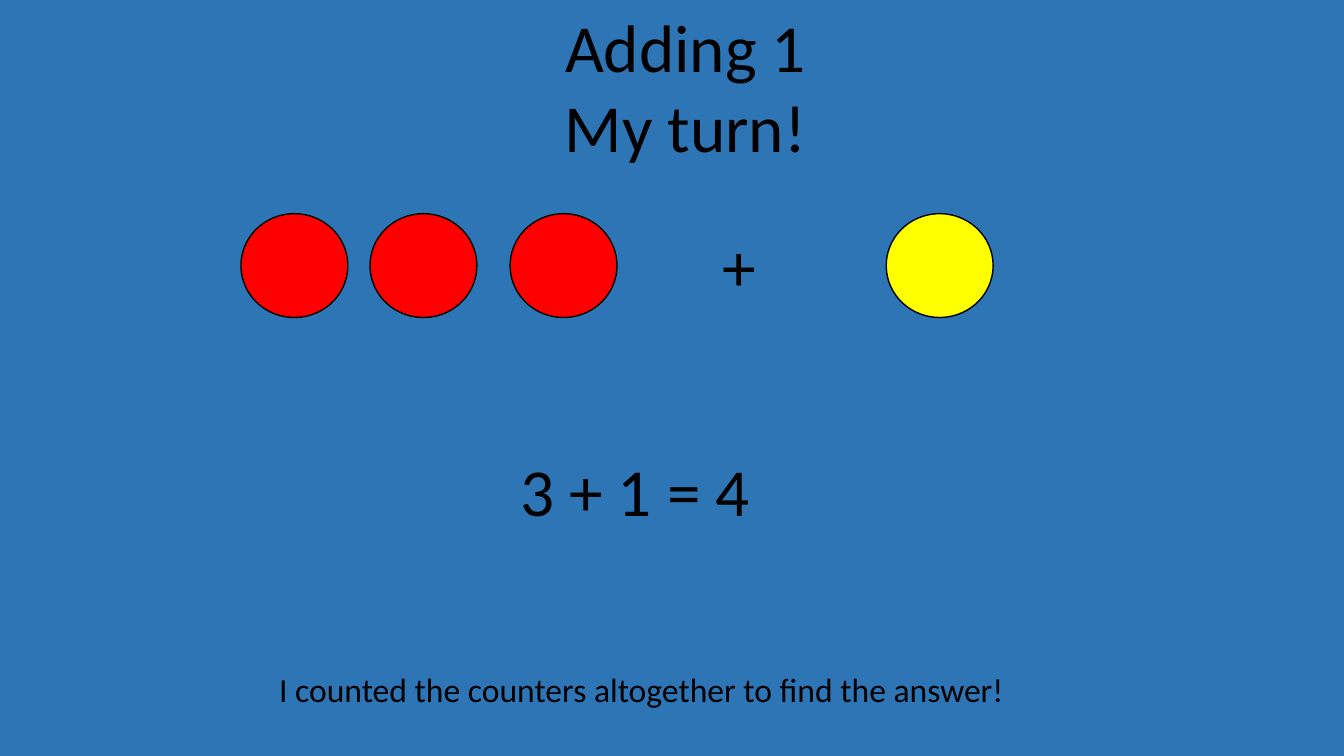
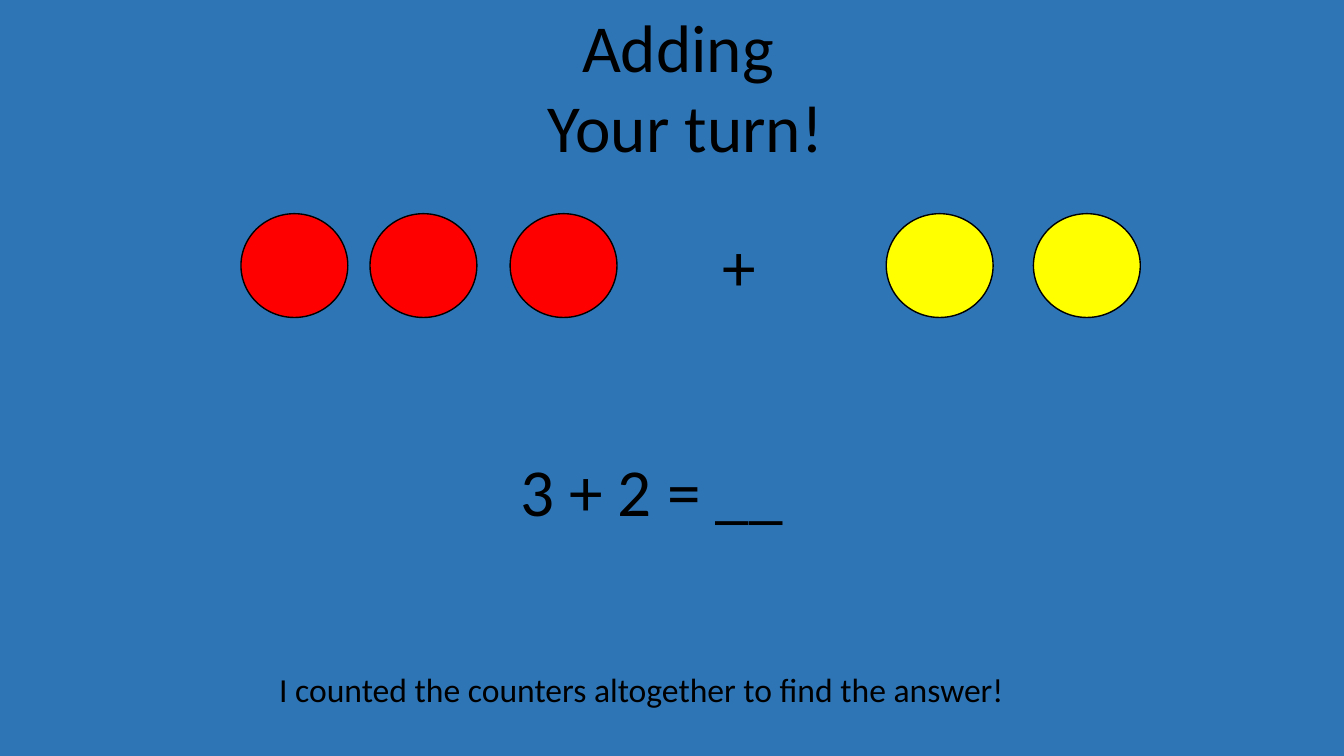
from pptx import Presentation
from pptx.dml.color import RGBColor
from pptx.enum import shapes, text
from pptx import util as u

SCALE = 9144  # EMU per px, 100 px to the inch
BLUE, RED, YELLOW, BLACK = "2E75B6", "FF0000", "FFFF00", "000000"
FONT = "Calibri"
LARGE, SMALL = 48, 24
TITLE_ONLY = 5


def px(*sizes):
    """Turn px lengths into EMU."""
    return [u.Emu(size * SCALE) for size in sizes]


def paint(color, code):
    color.rgb = RGBColor.from_string(code)


class Deck:
    """Holds the shared style and the current slide."""

    def __init__(self):
        self.prs = Presentation()
        self.prs.slide_width, self.prs.slide_height = px(1333, 750)
        fill = self.prs.slide_master.background.fill
        fill.solid()
        paint(fill.fore_color, BLUE)

    def style(self, frame, words, size, align):
        """Set the words of a frame and format them."""
        frame.text = words
        frame.word_wrap = True
        frame.auto_size = text.MSO_AUTO_SIZE.NONE
        frame.vertical_anchor = text.MSO_ANCHOR.TOP
        for para in frame.paragraphs:
            para.alignment = align
            for run in para.runs:
                run.font.name = FONT
                run.font.size = u.Pt(size)
                paint(run.font.color, BLACK)

    def start(self, title):
        """Add a slide with its title."""
        layout = self.prs.slide_layouts[TITLE_ONLY]
        self.slide = self.prs.slides.add_slide(layout)
        box = self.slide.shapes.title
        box.left, box.top, box.width, box.height = px(123, 0, 1114, 172)
        self.style(box.text_frame, title, LARGE, text.PP_ALIGN.CENTER)

    def label(self, words, left, top, width, height, size=LARGE):
        box = self.slide.shapes.add_textbox(*px(left, top, width, height))
        self.style(box.text_frame, words, size, text.PP_ALIGN.LEFT)

    def counter(self, left, code):
        disc = self.slide.shapes.add_shape(
            shapes.MSO_SHAPE.OVAL, *px(left, 212, 106, 103))
        disc.shadow.inherit = False
        disc.fill.solid()
        paint(disc.fill.fore_color, code)
        paint(disc.line.color, BLACK)
        disc.line.width = u.Pt(1)

    def sum(self, title, reds, yellows, equation):
        """Add a slide that shows one sum with counters."""
        self.start(title)
        for code, lefts in ((RED, reds), (YELLOW, yellows)):
            for left in lefts:
                self.counter(left, code)
        self.label("+", 707, 218, 172, 91)
        self.label(equation, 506, 441, 336, 91)
        self.label("I counted the counters altogether to find the answer!",
                   267, 659, 879, 50, SMALL)


def main():
    deck = Deck()
    reds = (239, 367, 506)
    deck.sum("Adding 1\nMy turn!", reds, (879,), "3 + 1 = 4")
    deck.sum("Adding \nYour turn!", reds, (879, 1025), "3 + 2 = __")
    deck.prs.save("out.pptx")


if __name__ == "__main__":
    main()
